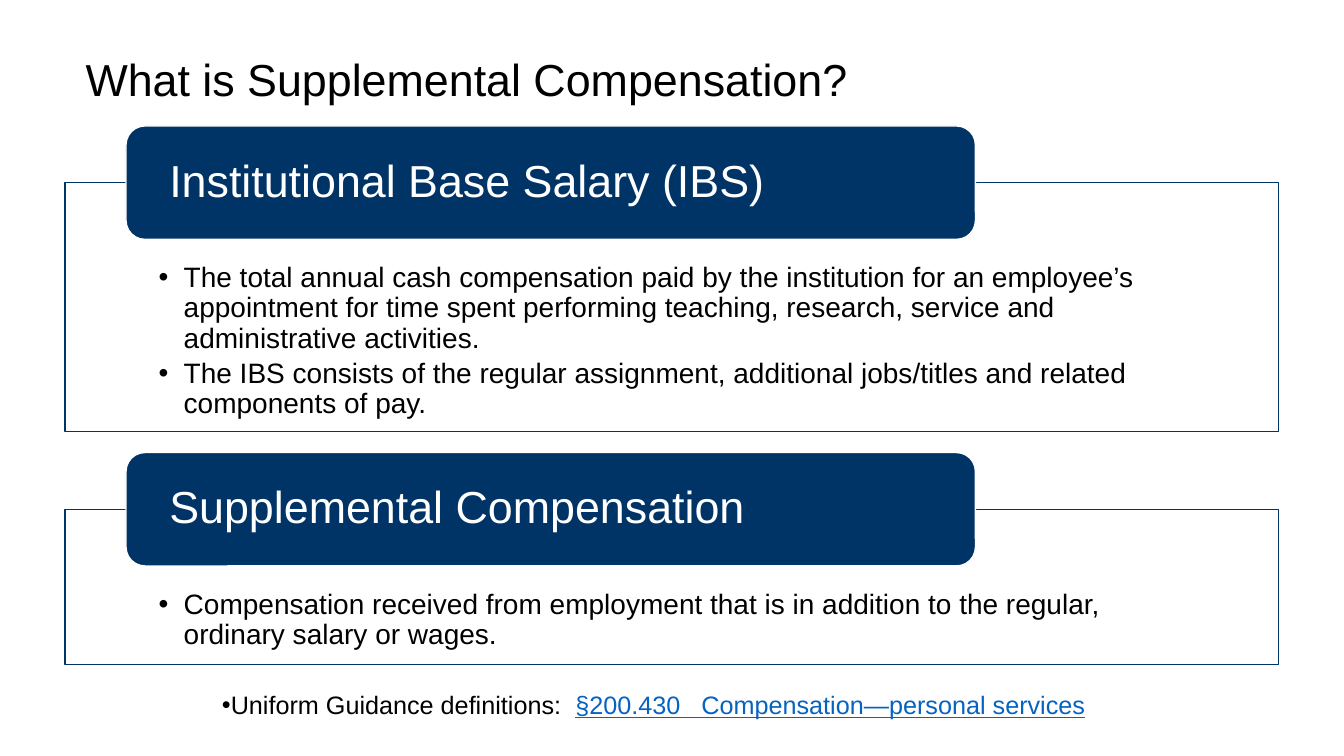
from dataclasses import dataclass

from lxml.etree import SubElement
from pptx import Presentation
from pptx.dml.color import RGBColor
from pptx.enum.shapes import MSO_SHAPE
from pptx.enum.text import MSO_ANCHOR, PP_ALIGN
from pptx.oxml.ns import qn
from pptx.shapes.autoshape import Shape
from pptx.slide import Slide
from pptx.text.text import TextFrame, _Paragraph
from pptx.util import Pt

PX = 9525
NAVY = RGBColor(0x00, 0x33, 0x66)
WHITE = RGBColor(0xFF, 0xFF, 0xFF)
BLACK = RGBColor(0x00, 0x00, 0x00)
LINK_BLUE = RGBColor(0x05, 0x63, 0xC1)

PANEL_LEFT, PANEL_WIDTH = 62, 1156
TAB_LEFT, TAB_WIDTH, TAB_HEIGHT = 120, 809, 108
BULLET_INDENT = 24


@dataclass(frozen=True)
class Definition:
    term: str
    points: tuple[str, ...]
    top: int
    height: int


DEFINITIONS = (
    Definition(
        "Institutional Base Salary (IBS)",
        (
            "The total annual cash compensation paid by the institution for an employee’s "
            "appointment for time spent performing teaching, research, service and "
            "administrative activities.",
            "The IBS consists of the regular assignment, additional jobs/titles and related "
            "components of pay.",
        ),
        174,
        237,
    ),
    Definition(
        "Supplemental Compensation",
        (
            "Compensation received from employment that is in addition to the regular, "
            "ordinary salary or wages.",
        ),
        485,
        148,
    ),
)


def style_paragraph(paragraph: _Paragraph, size: int, color: RGBColor) -> None:
    paragraph.alignment = PP_ALIGN.LEFT
    paragraph.line_spacing = 0.9
    paragraph.font.name = "Arial"
    paragraph.font.size = Pt(size)
    paragraph.font.color.rgb = color


def add_bullet(paragraph: _Paragraph, indent: int) -> None:
    properties = paragraph._p.get_or_add_pPr()
    properties.set("marL", str(indent * PX))
    properties.set("indent", str(-indent * PX))
    SubElement(properties, qn("a:buFont"), typeface="Arial")
    SubElement(properties, qn("a:buChar"), char="•")


def set_insets(frame: TextFrame, left: int, top: int, right: int, bottom: int) -> None:
    frame.word_wrap = True
    frame.margin_left, frame.margin_top = left * PX, top * PX
    frame.margin_right, frame.margin_bottom = right * PX, bottom * PX


def add_block(slide: Slide, kind: MSO_SHAPE, left: int, top: int, width: int, height: int,
              fill: RGBColor, line: RGBColor) -> Shape:
    block = slide.shapes.add_shape(kind, left * PX, top * PX, width * PX, height * PX)
    block.shadow.inherit = False
    block.fill.solid()
    block.fill.fore_color.rgb = fill
    block.line.color.rgb = line
    block.line.width = Pt(1)
    return block


def add_text_area(slide: Slide, left: int, top: int, width: int, height: int) -> TextFrame:
    frame = slide.shapes.add_textbox(left * PX, top * PX, width * PX, height * PX).text_frame
    frame.word_wrap = True
    return frame


def add_definition(slide: Slide, definition: Definition) -> None:
    panel = add_block(slide, MSO_SHAPE.RECTANGLE, PANEL_LEFT, definition.top,
                      PANEL_WIDTH, definition.height, WHITE, NAVY).text_frame
    panel.vertical_anchor = MSO_ANCHOR.TOP
    set_insets(panel, 89, 77, 89, 15)
    for index, point in enumerate(definition.points):
        paragraph = panel.add_paragraph() if index else panel.paragraphs[0]
        paragraph.text = point
        add_bullet(paragraph, BULLET_INDENT)
        style_paragraph(paragraph, 20, BLACK)
        paragraph.space_after = Pt(3.5)

    tab = add_block(slide, MSO_SHAPE.ROUNDED_RECTANGLE, TAB_LEFT,
                    definition.top - TAB_HEIGHT // 2, TAB_WIDTH, TAB_HEIGHT,
                    NAVY, WHITE).text_frame
    tab.vertical_anchor = MSO_ANCHOR.MIDDLE
    set_insets(tab, 36, 0, 36, 0)
    tab.text = definition.term
    style_paragraph(tab.paragraphs[0], 32, WHITE)


def add_title(slide: Slide) -> None:
    title = add_text_area(slide, 72, 50, 1136, 60)
    title.text = "What is Supplemental Compensation?"
    style_paragraph(title.paragraphs[0], 32, BLACK)


def add_reference(slide: Slide) -> None:
    reference = add_text_area(slide, 202, 655, 1060, 50).paragraphs[0]
    add_bullet(reference, 0)
    style_paragraph(reference, 18, BLACK)
    reference.add_run().text = "Uniform Guidance definitions:  "
    section = reference.add_run()
    section.text = "§200.430   Compensation—personal services"
    section.font.color.rgb = LINK_BLUE
    section.font.underline = True


def main() -> None:
    """Build the slide that defines base salary and supplemental compensation."""
    presentation = Presentation()
    presentation.slide_width, presentation.slide_height = 1280 * PX, 720 * PX
    slide = presentation.slides.add_slide(presentation.slide_layouts[6])
    add_title(slide)
    add_reference(slide)
    for definition in DEFINITIONS:
        add_definition(slide, definition)
    presentation.save("out.pptx")


if __name__ == "__main__":
    main()
